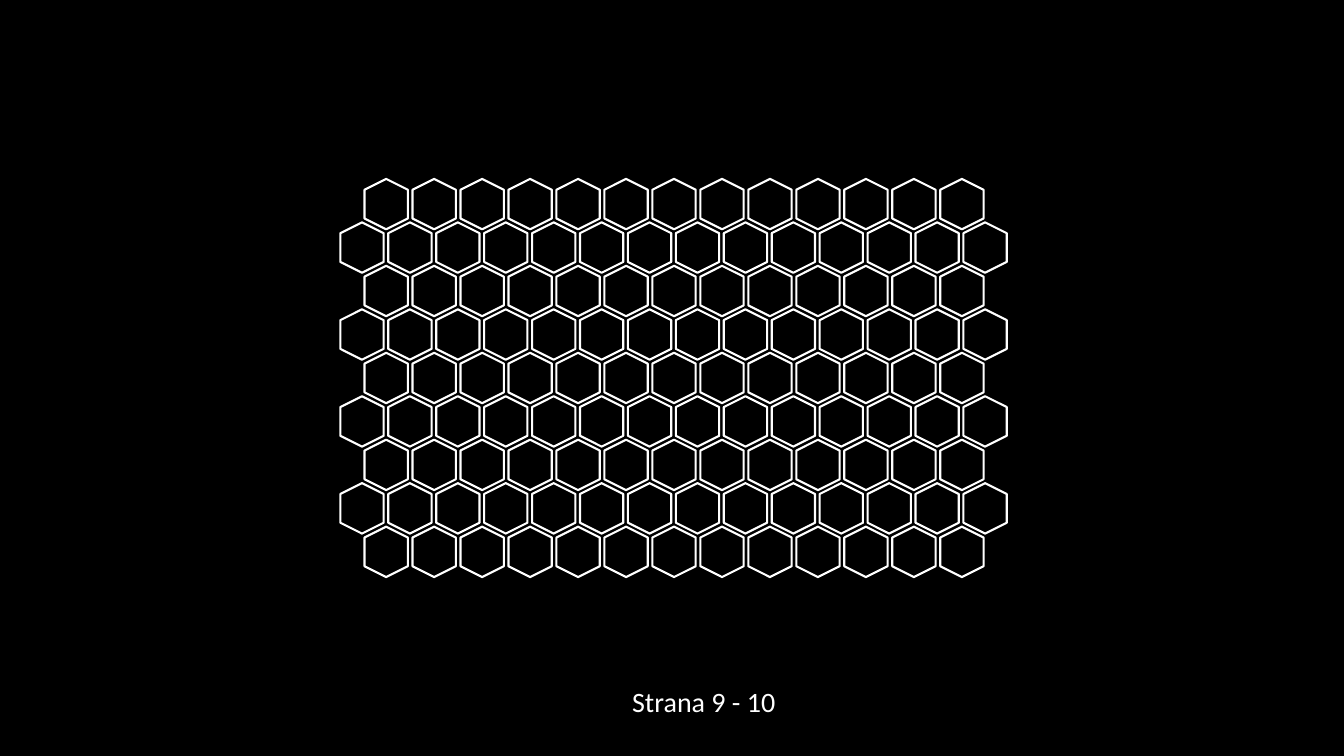
import pptx
import pptx.util
import pptx.dml.color
import pptx.enum.shapes
import pptx.enum.text

Inches = pptx.util.Inches
Pt = pptx.util.Pt
BLACK = pptx.dml.color.RGBColor(0x00, 0x00, 0x00)
WHITE = pptx.dml.color.RGBColor(0xFF, 0xFF, 0xFF)

ROWS = 9
TOP, BOTTOM = 1.81, 5.26
NARROW_ROW = (13, 3.58, 9.29)
WIDE_ROW = (14, 3.34, 9.52)
CELL_WIDTH, CELL_HEIGHT = 0.5, 0.43
LABEL_FONT = {"name": "Calibri", "size": Pt(20)}


def paint_background(page):
    fill = page.background.fill
    fill.solid()
    fill.fore_color.rgb = BLACK


def add_cell(honeycomb, left, top):
    cell = honeycomb.shapes.add_shape(
        pptx.enum.shapes.MSO_SHAPE.HEXAGON,
        Inches(left), Inches(top), Inches(CELL_WIDTH), Inches(CELL_HEIGHT))
    cell.rotation = 90
    cell.shadow.inherit = False
    cell.fill.solid()
    cell.fill.fore_color.rgb = BLACK
    cell.line.color.rgb = WHITE
    cell.line.width = Pt(1.5)


def add_honeycomb(page):
    honeycomb = page.shapes.add_group_shape()
    row_step = (BOTTOM - TOP) / (ROWS - 1)
    for row in range(ROWS):
        count, first, last = WIDE_ROW if row % 2 else NARROW_ROW
        column_step = (last - first) / (count - 1)
        for column in range(count):
            add_cell(honeycomb, first + column * column_step, TOP + row * row_step)


def add_label(page, text, left, top, width, height):
    box = page.shapes.add_textbox(
        Inches(left), Inches(top), Inches(width), Inches(height))
    box.text_frame.word_wrap = True
    box.text_frame.auto_size = pptx.enum.text.MSO_AUTO_SIZE.SHAPE_TO_FIT_TEXT
    para = box.text_frame.paragraphs[0]
    para.alignment = pptx.enum.text.PP_ALIGN.RIGHT
    span = para.add_run()
    span.text = text
    for name, value in LABEL_FONT.items():
        setattr(span.font, name, value)
    span.font.color.rgb = WHITE


def main():
    deck = pptx.Presentation()
    deck.slide_width = Inches(13.33)
    deck.slide_height = Inches(7.5)
    page = deck.slides.add_slide(deck.slide_layouts[6])
    paint_background(page)
    add_honeycomb(page)
    add_label(page, "Strana 9 - 10", 5.91, 6.74, 1.88, 0.44)
    deck.save("out.pptx")


if __name__ == "__main__":
    main()
